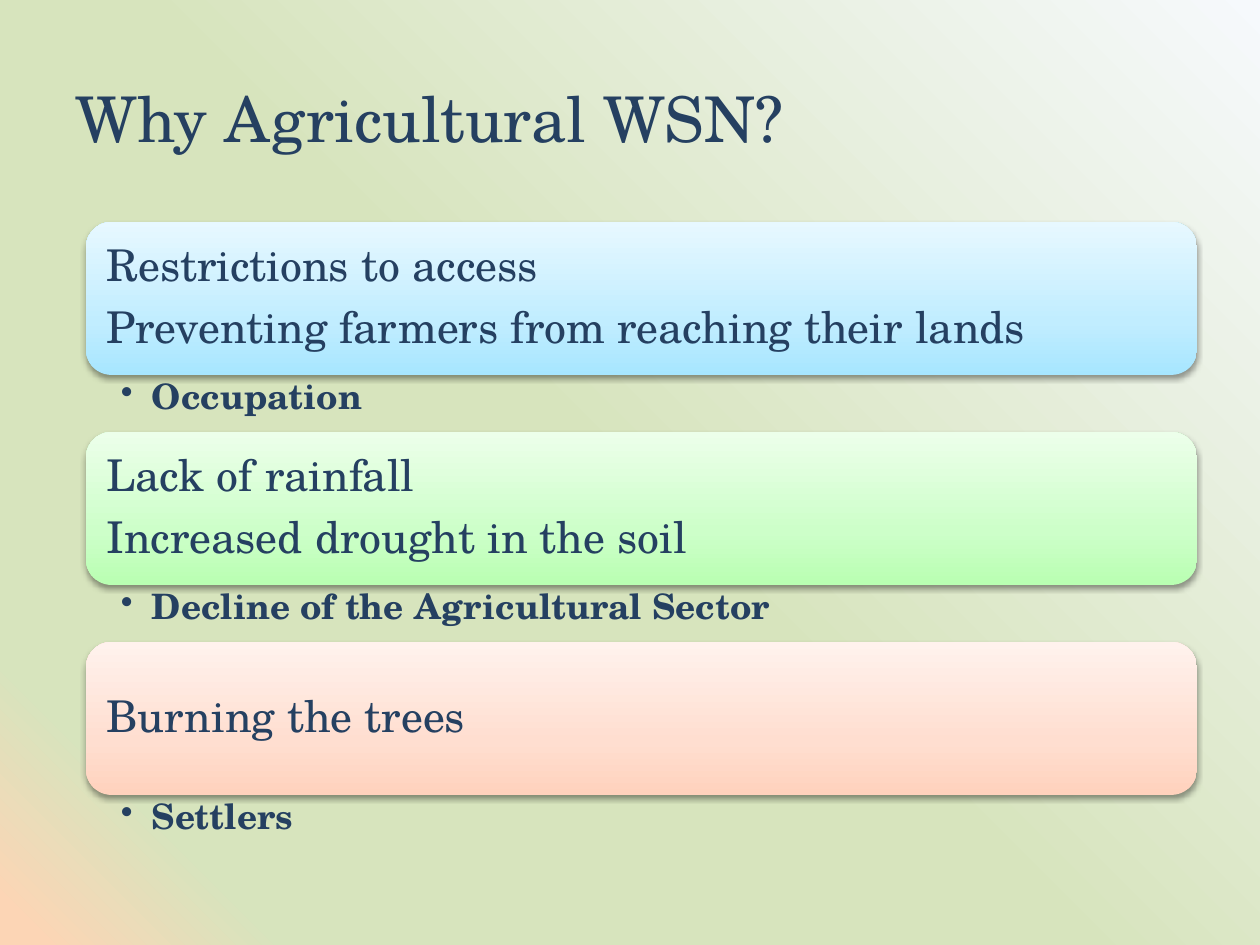
from lxml.etree import SubElement
from pptx import Presentation
from pptx.dml.color import RGBColor
from pptx.enum.shapes import MSO_SHAPE as Shape
from pptx.enum.text import MSO_ANCHOR as Anchor, PP_ALIGN as Align
from pptx.oxml.ns import qn
from pptx.util import Pt

TITLE = "Why Agricultural WSN?"
BLUE = [(0, RGBColor(0xA7, 0xE6, 0xFF)), (35, RGBColor(0xC1, 0xED, 0xFF)), (100, RGBColor(0xE7, 0xF8, 0xFF))]
GREEN = [(0, RGBColor(0xB9, 0xFF, 0xB2)), (35, RGBColor(0xCD, 0xFF, 0xC9)), (100, RGBColor(0xEC, 0xFF, 0xEA))]
PEACH = [(0, RGBColor(0xFF, 0xD2, 0xBD)), (35, RGBColor(0xFF, 0xDE, 0xD0)), (100, RGBColor(0xFF, 0xF2, 0xED))]
SAGE = RGBColor(0xD7, 0xE4, 0xBD)
BACKGROUND = [(0, RGBColor(0xF6, 0xF9, 0xFC)), (51, SAGE), (87, SAGE), (98, RGBColor(0xFC, 0xD5, 0xB5))]
NAVY = RGBColor(0x25, 0x40, 0x61)
BLACK = RGBColor(0, 0, 0)
FONT = "TeX Gyre Schola"

REASONS = [
    (["Restrictions to access", "Preventing farmers from reaching their lands"], "Occupation", BLUE),
    (["Lack of rainfall", "Increased drought in the soil"], "Decline of the Agricultural Sector", GREEN),
    (["Burning the trees"], "Settlers", PEACH),
]
LEFT, TOP, WIDTH = 86, 222, 1111
CARD_HEIGHT, CAPTION_HEIGHT = 153, 57
PITCH = CARD_HEIGHT + CAPTION_HEIGHT


def px(*values):
    return [round(value * 914400 / 126) for value in values]


def add_color(parent, color, alpha):
    element = SubElement(parent, qn("a:srgbClr"), val=str(color))
    SubElement(element, qn("a:alpha"), val=str(alpha * 1000))


def set_gradient(fill, element, stops, angle):
    fill.gradient()
    fill.gradient_angle = angle
    stop_list = element.xpath(".//a:gsLst")[0]
    for stop in list(stop_list):
        stop_list.remove(stop)
    for position, color in stops:
        add_color(SubElement(stop_list, qn("a:gs"), pos=str(position * 1000)), color, 100)


def add_shadow(shape):
    shape.shadow.inherit = False
    effects = shape.element.spPr.find(qn("a:effectLst"))
    shadow = SubElement(effects, qn("a:outerShdw"), blurRad=str(Pt(3.1)), dist=str(Pt(1.6)),
                        dir="5400000", rotWithShape="0")
    add_color(shadow, BLACK, 38)


def write_text(shape, lines, size, bold=False, anchor=Anchor.MIDDLE, margins=(13, 6, 13, 6),
               line_spacing=0.9, space_after=0, bullet=False):
    frame = shape.text_frame
    frame.word_wrap = True
    frame.vertical_anchor = anchor
    frame.margin_left, frame.margin_top, frame.margin_right, frame.margin_bottom = px(*margins)
    frame.text = "\n".join(lines)
    for paragraph in frame.paragraphs:
        paragraph.alignment = Align.LEFT
        paragraph.line_spacing = line_spacing
        paragraph.space_after = Pt(space_after)
        font = paragraph.runs[0].font
        font.name, font.size, font.bold = FONT, Pt(size), bold
        font.color.rgb = NAVY
        if bullet:
            properties = paragraph._p.get_or_add_pPr()
            indent = px(31)[0]
            properties.set("marL", str(indent))
            properties.set("indent", str(-indent))
            SubElement(properties, qn("a:buChar"), char="•")


def add_reason(slide, index, lines, caption, stops):
    top = TOP + index * PITCH
    card = slide.shapes.add_shape(Shape.ROUNDED_RECTANGLE, *px(LEFT, top, WIDTH, CARD_HEIGHT))
    set_gradient(card.fill, card.element, stops, 90)
    card.line.fill.background()
    add_shadow(card)
    write_text(card, lines, 25, margins=(13, 13, 13, 13), space_after=8.75)
    box = slide.shapes.add_textbox(*px(LEFT, top + CARD_HEIGHT, WIDTH, CAPTION_HEIGHT))
    write_text(box, [caption], 20, bold=True, anchor=Anchor.TOP, margins=(35, 4, 24, 4),
               space_after=4, bullet=True)


def main():
    presentation = Presentation()
    presentation.slide_width, presentation.slide_height = px(1260, 945)
    slide = presentation.slides.add_slide(presentation.slide_layouts[5])
    set_gradient(slide.background.fill, slide.element, BACKGROUND, 225)
    title = slide.shapes.title
    title.left, title.top, title.width, title.height = px(63, 38, 1134, 158)
    write_text(title, [TITLE], 36, line_spacing=1.0)
    for index, reason in enumerate(REASONS):
        add_reason(slide, index, *reason)
    presentation.save("out.pptx")


if __name__ == "__main__":
    main()
